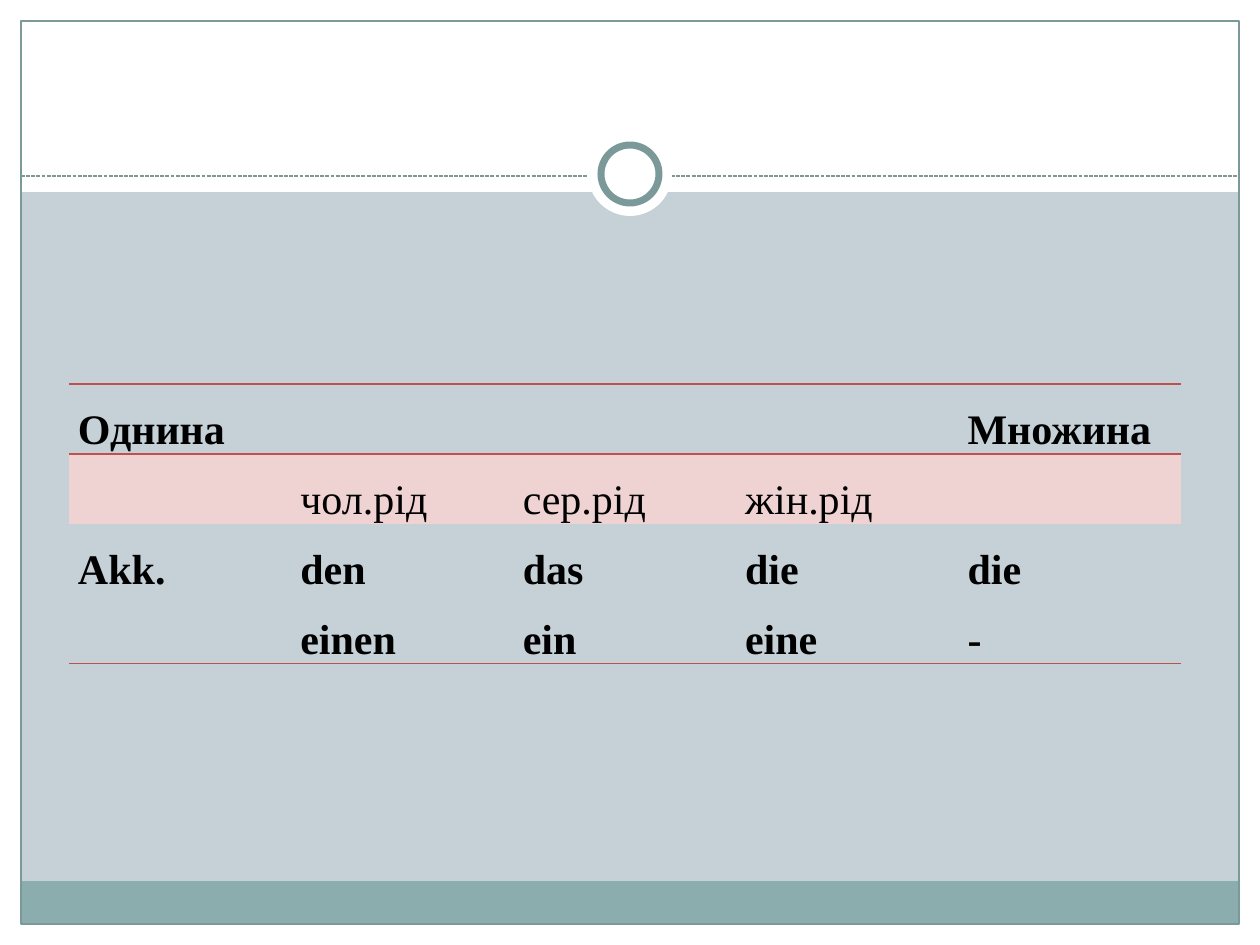
from dataclasses import dataclass

from lxml import etree
from pptx import Presentation
from pptx.dml.color import RGBColor
from pptx.enum.dml import MSO_LINE
from pptx.enum.shapes import MSO_CONNECTOR, MSO_SHAPE
from pptx.enum.text import PP_ALIGN
from pptx.oxml.ns import qn
from pptx.util import Emu, Pt

RECTANGLE = MSO_SHAPE.RECTANGLE
OVAL = MSO_SHAPE.OVAL
STRAIGHT = MSO_CONNECTOR.STRAIGHT
SQUARE_DASH = MSO_LINE.SQUARE_DOT
JUSTIFY = PP_ALIGN.JUSTIFY
PLAIN_TABLE_STYLE = "{2D5ABB26-0587-4C30-8999-92F81FD0307C}"
PAGE_WIDTH, PAGE_HEIGHT = 1260, 945
MARGIN = 21


@dataclass(frozen=True)
class Theme:
    background: str = "C5D1D7"
    paper: str = "FFFFFF"
    band: str = "8CADAE"
    frame: str = "7C999A"
    rule: str = "C0504D"
    highlight: str = "EFD3D2"
    text: str = "000000"
    font: str = "Times New Roman"
    text_size: int = 24
    line_spacing: float = 1.5
    thin: float = 0.75
    border: int = 1
    ring: int = 4


THEME = Theme()

CASE_ROWS = [
    ["Однина", "", "", "", "Множина"],
    ["", "чол.рід", "сер.рід", "жін.рід", ""],
    ["Akk.", "den\neinen", "das\nein", "die\neine", "die\n-"],
]
ROW_HEIGHTS = [70, 70, 139]
GENDER_ROW = 1


def px(length):
    return Emu(round(length * 914400 / 126))


def color(value):
    return RGBColor.from_string(value)


def add_box(page, kind, bounds, fill=None, line=None, line_width=THEME.thin):
    box = page.shapes.add_shape(kind, *map(px, bounds))
    box.shadow.inherit = False
    if fill:
        box.fill.solid()
        box.fill.fore_color.rgb = color(fill)
    else:
        box.fill.background()
    if line:
        box.line.color.rgb = color(line)
        box.line.width = Pt(line_width)
    else:
        box.line.fill.background()


def add_dashed_line(page, left, right, top):
    line = page.shapes.add_connector(STRAIGHT, px(left), px(top), px(right), px(top))
    line.line.color.rgb = color(THEME.frame)
    line.line.width = Pt(THEME.thin)
    line.line.dash_style = SQUARE_DASH
    etree.SubElement(line._element.spPr, qn("a:effectLst"))


def add_border(cell, side):
    border = etree.Element(qn(f"a:{side}"), w=str(Pt(THEME.border)))
    fill = etree.SubElement(border, qn("a:solidFill"))
    etree.SubElement(fill, qn("a:srgbClr"), val=THEME.rule)
    cell._tc.get_or_add_tcPr().insert(0, border)


def fill_cell(cell, text, bold):
    cell.margin_left = cell.margin_right = px(9)
    cell.margin_top = cell.margin_bottom = 0
    cell.text_frame.text = text
    for para in cell.text_frame.paragraphs:
        para.alignment = JUSTIFY
        para.line_spacing = THEME.line_spacing
        for span in para.runs:
            span.font.name = THEME.font
            span.font.size = Pt(THEME.text_size)
            span.font.bold = bold
            span.font.color.rgb = color(THEME.text)


def add_case_table(page, bounds):
    columns = len(CASE_ROWS[0])
    frame = page.shapes.add_table(len(CASE_ROWS), columns, *map(px, bounds))
    table = frame.table
    table.first_row = table.horz_banding = False
    table._tbl.tblPr.find(qn("a:tableStyleId")).text = PLAIN_TABLE_STYLE
    for row_index, texts in enumerate(CASE_ROWS):
        table.rows[row_index].height = px(ROW_HEIGHTS[row_index])
        for column_index, text in enumerate(texts):
            cell = table.cell(row_index, column_index)
            if text:
                fill_cell(cell, text, row_index != GENDER_ROW)
            if row_index == GENDER_ROW:
                cell.fill.solid()
                cell.fill.fore_color.rgb = color(THEME.highlight)
            else:
                cell.fill.background()
                add_border(cell, "lnB")
            if row_index == 0:
                add_border(cell, "lnT")
    table.cell(0, 0).merge(table.cell(0, columns - 2))


def add_page_frame(page):
    right, bottom = PAGE_WIDTH - MARGIN, PAGE_HEIGHT - MARGIN
    inner_width = PAGE_WIDTH - 2 * MARGIN
    for bounds in [
        (0, bottom, PAGE_WIDTH, MARGIN),
        (0, 0, PAGE_WIDTH, 192),
        (0, 0, MARGIN, PAGE_HEIGHT),
        (right, 0, MARGIN, PAGE_HEIGHT),
    ]:
        add_box(page, RECTANGLE, bounds, fill=THEME.paper)
    add_box(page, RECTANGLE, (MARGIN, 881, inner_width, 43), fill=THEME.band)
    add_box(page, RECTANGLE, (MARGIN, MARGIN, inner_width, bottom - MARGIN),
            line=THEME.frame)
    add_dashed_line(page, MARGIN, right, 176)
    add_box(page, OVAL, (588, 132, 84, 84), fill=THEME.paper)
    add_box(page, OVAL, (601, 145, 58, 58), THEME.paper, THEME.frame, THEME.ring)


def main():
    deck = Presentation()
    deck.slide_width, deck.slide_height = px(PAGE_WIDTH), px(PAGE_HEIGHT)
    page = deck.slides.add_slide(deck.slide_layouts[6])
    page.background.fill.solid()
    page.background.fill.fore_color.rgb = color(THEME.background)
    add_page_frame(page)
    add_case_table(page, (69, 384, 1112, sum(ROW_HEIGHTS)))
    deck.save("out.pptx")


if __name__ == "__main__":
    main()
